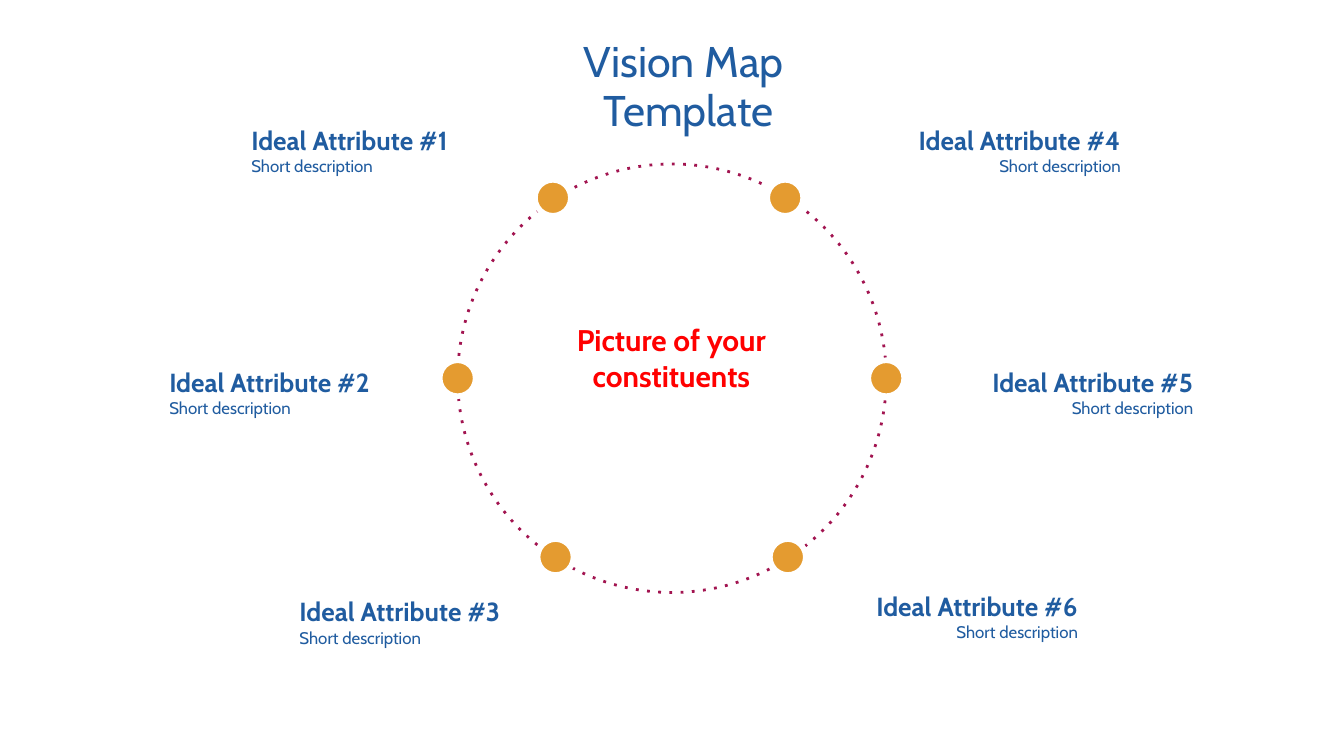
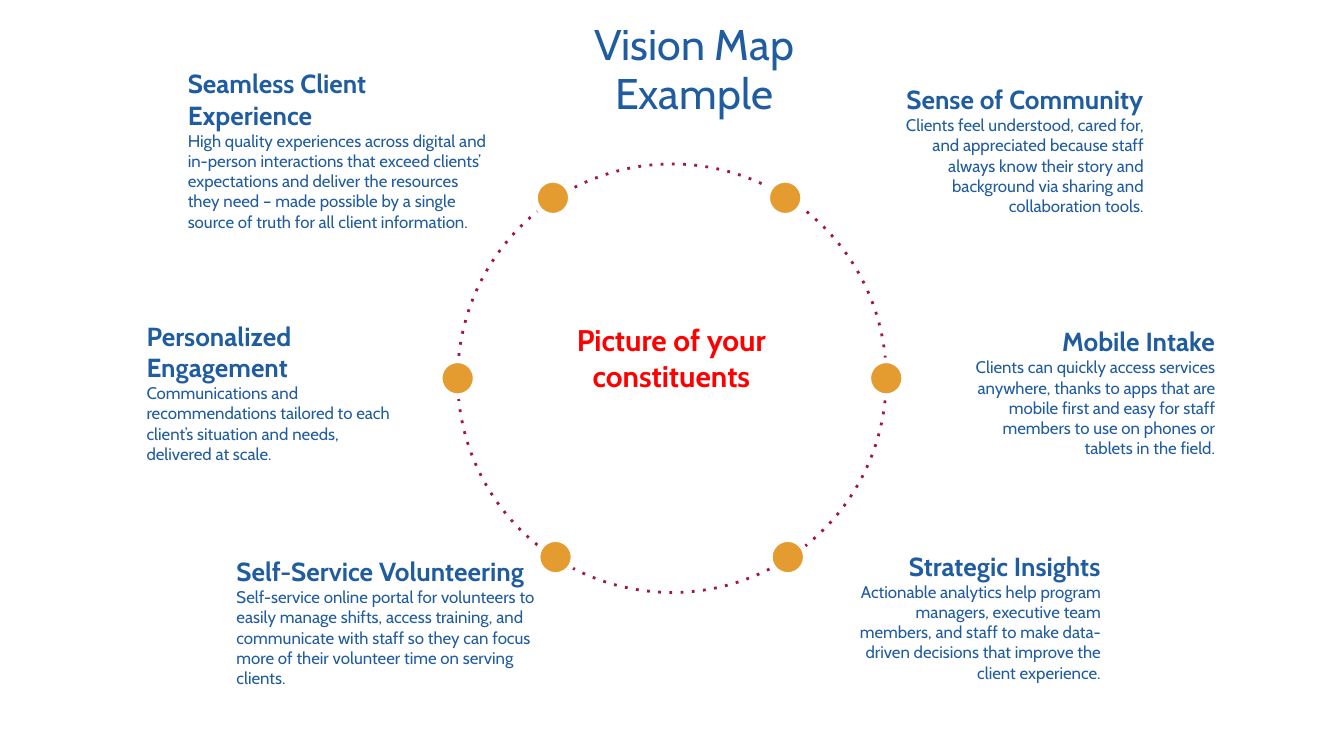
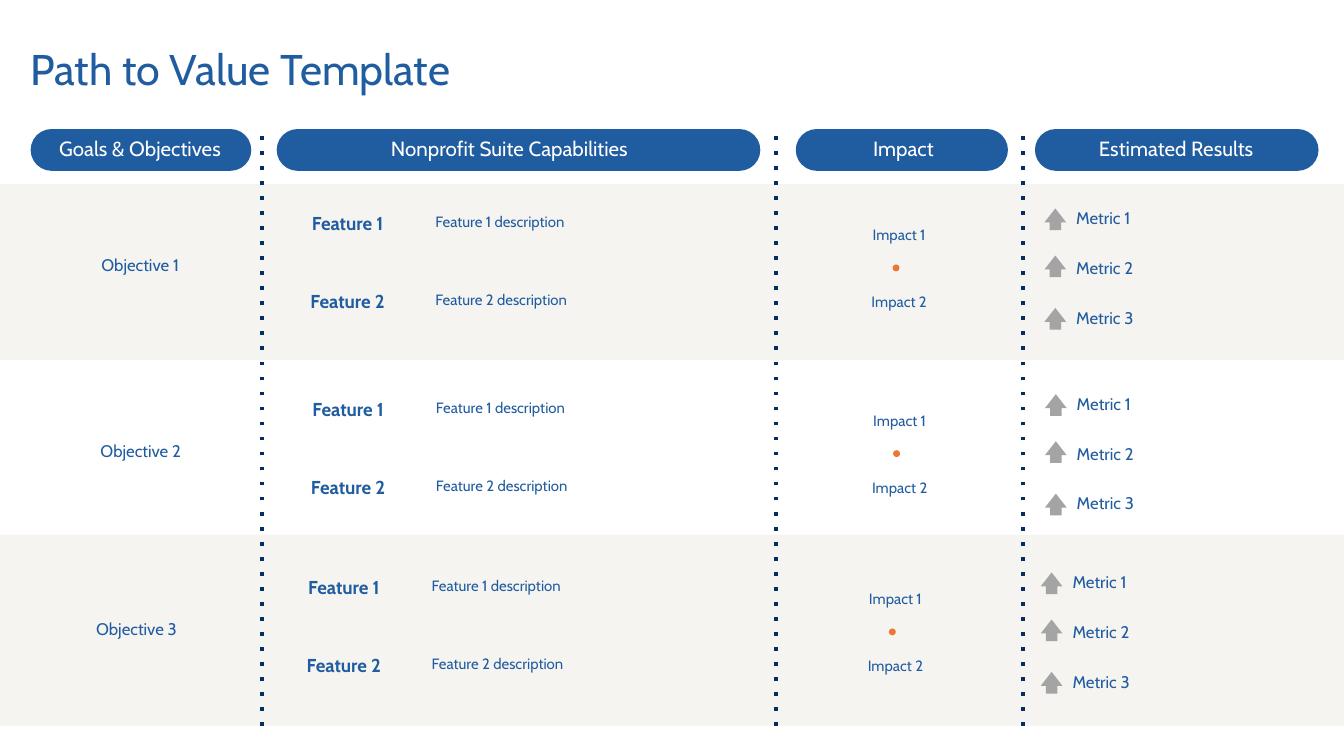
from lxml import etree
from pptx import Presentation
from pptx import util as u
from pptx.dml.color import RGBColor
from pptx.enum import dml, shapes, text
from pptx.oxml.ns import qn

BLUE = RGBColor(0x20, 0x5C, 0xA0)
NAVY = RGBColor(0x03, 0x2E, 0x61)
MAROON = RGBColor(0xA2, 0x14, 0x50)
AMBER = RGBColor(0xE4, 0x9B, 0x30)
ORANGE = RGBColor(0xED, 0x76, 0x33)
GREY = RGBColor(0xA4, 0xA4, 0xA4)
CREAM = RGBColor(0xF6, 0xF4, 0xF1)
WHITE = RGBColor(0xFF, 0xFF, 0xFF)
RED = RGBColor(0xFF, 0x00, 0x00)

FONT = "Cabin"
LEFT, CENTER, RIGHT = text.PP_ALIGN.LEFT, text.PP_ALIGN.CENTER, text.PP_ALIGN.RIGHT
TOP, MIDDLE, BOTTOM = text.MSO_ANCHOR.TOP, text.MSO_ANCHOR.MIDDLE, text.MSO_ANCHOR.BOTTOM
KIND = shapes.MSO_SHAPE

MARKER_ROWS = [(3.4, 10.11, 14.5), (6.81, 8.31, 16.41), (10.19, 10.16, 14.55)]
ATTRIBUTE_TOPS = [-0.08, 4.5, 8.84, -0.08, 4.5, 8.74]

TEMPLATE_ATTRIBUTES = [
    (left, 5.1, f"Ideal Attribute #{number}", "Short description")
    for number, left in enumerate([4.65, 3.1, 5.56, 16.18, 17.55, 15.37], 1)
]
EXAMPLE_ATTRIBUTES = [
    (3.45, 5.87, "Seamless Client Experience",
     "High quality experiences across digital and in-person interactions that exceed "
     "clients’ expectations and deliver the resources they need – made possible by a "
     "single source of truth for all client information."),
    (2.67, 5.1, "Personalized Engagement",
     "Communications and recommendations tailored to each client’s situation and needs, "
     "delivered at scale."),
    (4.37, 5.87, "Self-Service Volunteering",
     "Self-service online portal for volunteers to easily manage shifts, access training, "
     "and communicate with staff so they can focus more of their volunteer time on "
     "serving clients."),
    (16.61, 5.1, "Sense of Community",
     "Clients feel understood, cared for, and appreciated because staff always know their "
     "story and background via sharing and collaboration tools."),
    (17.96, 5.1, "Mobile Intake",
     "Clients can quickly access services anywhere, thanks to apps that are mobile first "
     "and easy for staff members to use on phones or tablets in the field."),
    (15.8, 5.1, "Strategic Insights",
     "Actionable analytics help program managers, executive team members, and staff to "
     "make data-driven decisions that improve the client experience."),
]

BANDS = [(3.48, 3.33), (10.11, 3.61)]
COLUMNS = [
    ("Goals & Objectives", 0.58, 4.17, 0.86, 3.58),
    ("Nonprofit Suite Capabilities", 5.23, 9.14, 6.76, 5.74),
    ("Impact", 15.04, 4.01, 15.32, 3.51),
    ("Estimated Results", 19.56, 5.36, 20.02, 4.42),
]
DIVIDERS = [4.95, 14.66, 19.33]
OBJECTIVE_OFFSETS = [(0, 0), (0.01, 3.51), (-0.07, 6.88)]
ARROW_TOPS = [3.94, 4.83, 5.82]


class Deck:
    """Hold the shared style and draw elements on the current slide or group."""

    def __init__(self):
        self.presentation = Presentation()
        self.presentation.slide_width = u.Cm(25.4)
        self.presentation.slide_height = u.Cm(14.29)

    def new_slide(self):
        """Start a blank slide."""
        self.slide = self.presentation.slides.add_slide(self.presentation.slide_layouts[6])
        self.canvas = self.slide.shapes
        self.origin = (0, 0)

    def new_group(self, origin):
        """Start a group whose elements are shifted by the origin."""
        self.canvas = self.slide.shapes.add_group_shape().shapes
        self.origin = origin

    def place(self, left, top, width, height):
        """Turn a box in centimetres into shifted lengths."""
        return (u.Cm(left + self.origin[0]), u.Cm(top + self.origin[1]),
                u.Cm(width), u.Cm(height))

    def outline(self, shape, color, width, dotted=False):
        """Colour a line and optionally dot it."""
        shape.line.color.rgb = color
        shape.line.width = u.Pt(width)
        if dotted:
            shape.line.dash_style = dml.MSO_LINE.ROUND_DOT
            shape._element.find(".//" + qn("a:prstDash")).set("val", "dot")

    def shape(self, kind, box, fill=None, adjustments=(), line=None):
        """Add a preset shape; line is colour, width and dotted."""
        shape = self.canvas.add_shape(kind, *self.place(*box))
        shape.shadow.inherit = False
        if fill is None:
            shape.fill.background()
        else:
            shape.fill.solid()
            shape.fill.fore_color.rgb = fill
        if line is None:
            shape.line.fill.background()
        else:
            self.outline(shape, *line)
        for index, value in enumerate(adjustments):
            shape.adjustments[index] = value
        return shape

    def divider(self, x, start, end):
        """Add a dotted vertical connector."""
        connector = self.canvas.add_connector(
            shapes.MSO_CONNECTOR.STRAIGHT, u.Cm(x), u.Cm(start), u.Cm(x), u.Cm(end))
        self.outline(connector, NAVY, 2, True)
        etree.SubElement(connector._element.spPr, qn("a:effectLst"))

    def set_text(self, shape, lines, styles, align=LEFT, anchor=MIDDLE, inset=0.1,
                 color=BLUE, spacing=None):
        """Fill a shape with paragraphs, each styled by size and weight."""
        frame = shape.text_frame
        frame.text = "\n".join(lines)
        frame.word_wrap = True
        frame.vertical_anchor = anchor
        frame.margin_left = frame.margin_right = u.Cm(inset)
        frame.margin_top = frame.margin_bottom = u.Cm(inset)
        for paragraph, (size, bold) in zip(frame.paragraphs, styles):
            paragraph.alignment = align
            if spacing:
                paragraph.line_spacing = spacing
            for run in paragraph.runs:
                run.font.name = FONT
                run.font.size = u.Pt(size)
                run.font.bold = bold
                run.font.color.rgb = color

    def text_box(self, box, lines, styles, **options):
        """Add a text box with styled paragraphs."""
        self.set_text(self.canvas.add_textbox(*self.place(*box)), lines, styles, **options)

    def label(self, box, line, size, bold=False, **options):
        """Add a text box with one paragraph."""
        self.text_box(box, [line], [(size, bold)], **options)

    def title(self, box, lines, align=LEFT):
        """Add the slide title."""
        self.text_box(box, lines, [(23, False)] * len(lines),
                      align=align, anchor=BOTTOM, inset=0, spacing=0.95)

    def attribute(self, box, name, description, align):
        """Add a bold name above its description."""
        self.text_box(box, [name, description], [(14, True), (9, False)], align=align)

    def vision_map(self, title_box, title_lines, attributes):
        """Build a slide with six attributes around a dotted ring."""
        self.new_slide()
        self.shape(KIND.OVAL, (8.65, 3.1, 8.1, 8.1), WHITE, line=(MAROON, 1.5, True))
        self.title(title_box, title_lines, CENTER)
        for top, *lefts in MARKER_ROWS:
            for left in lefts:
                self.shape(KIND.OVAL, (left, top, 0.68, 0.68), AMBER, line=(WHITE, 3))
        for index, (left, width, name, description) in enumerate(attributes):
            self.attribute((left, ATTRIBUTE_TOPS[index], width, 5.82), name, description,
                           LEFT if index < 3 else RIGHT)
        self.label((10.29, 5.84, 4.8, 2.64), "Picture of your constituents", 16, True,
                   align=CENTER, anchor=TOP, inset=0.25, color=RED)

    def objective(self, number, origin):
        """Add one objective with its features, impacts and metrics."""
        self.new_group(origin)
        self.label((0.86, 3.73, 3.58, 2.57), f"Objective {number}", 9, align=CENTER)
        for index, arrow_top in enumerate(ARROW_TOPS):
            self.label((20.27, 3.86 + 0.94 * index, 4.42, 0.53), f"Metric {index + 1}", 9,
                       anchor=TOP, inset=0.07)
            arrow = self.shape(KIND.RIGHT_ARROW, (19.74, arrow_top, 0.41, 0.41), GREY,
                               (0.528, 0.64))
            arrow.rotation = 270
        for index in range(2):
            feature = f"Feature {index + 1}"
            shift = 1.47 * index
            name = self.shape(KIND.ROUNDED_RECTANGLE, (5.11, 3.51 + shift, 2.92, 1.42),
                              adjustments=(0.277,))
            self.set_text(name, [feature], [(10, True)], align=CENTER)
            self.label((7.98, 3.48 + shift, 6.5, 1.42), f"{feature} description", 8, inset=0.25)
            self.label((14.91, 3.99 + 1.27 * index, 4.17, 0.89), f"Impact {index + 1}", 8,
                       align=CENTER)
        self.shape(KIND.OVAL, (16.87, 5, 0.13, 0.13), ORANGE)

    def path_to_value(self):
        """Build the slide that leads from objectives to results."""
        self.new_slide()
        for top, height in BANDS:
            self.shape(KIND.RECTANGLE, (0, top, 25.4, height), CREAM)
        self.title((0.58, 0.36, 23.65, 1.45), ["Path to Value Template"])
        for heading, left, width, text_left, text_width in COLUMNS:
            self.shape(KIND.ROUNDED_RECTANGLE, (left, 2.44, width, 0.79), BLUE, (0.5,))
            self.label((text_left, 2.51, text_width, 0.61), heading, 11,
                       align=CENTER, anchor=TOP, inset=0.07, color=WHITE)
        for x in DIVIDERS:
            self.divider(x, 13.72, 2.46)
        for number, origin in enumerate(OBJECTIVE_OFFSETS, 1):
            self.objective(number, origin)


def main():
    deck = Deck()
    deck.vision_map((1.19, 0.51, 23.65, 2.06), ["Vision Map \vTemplate"], TEMPLATE_ATTRIBUTES)
    deck.vision_map((1.78, 0.2, 22.68, 2.06), ["Vision Map", "Example"], EXAMPLE_ATTRIBUTES)
    deck.path_to_value()
    deck.presentation.save("out.pptx")


if __name__ == "__main__":
    main()
